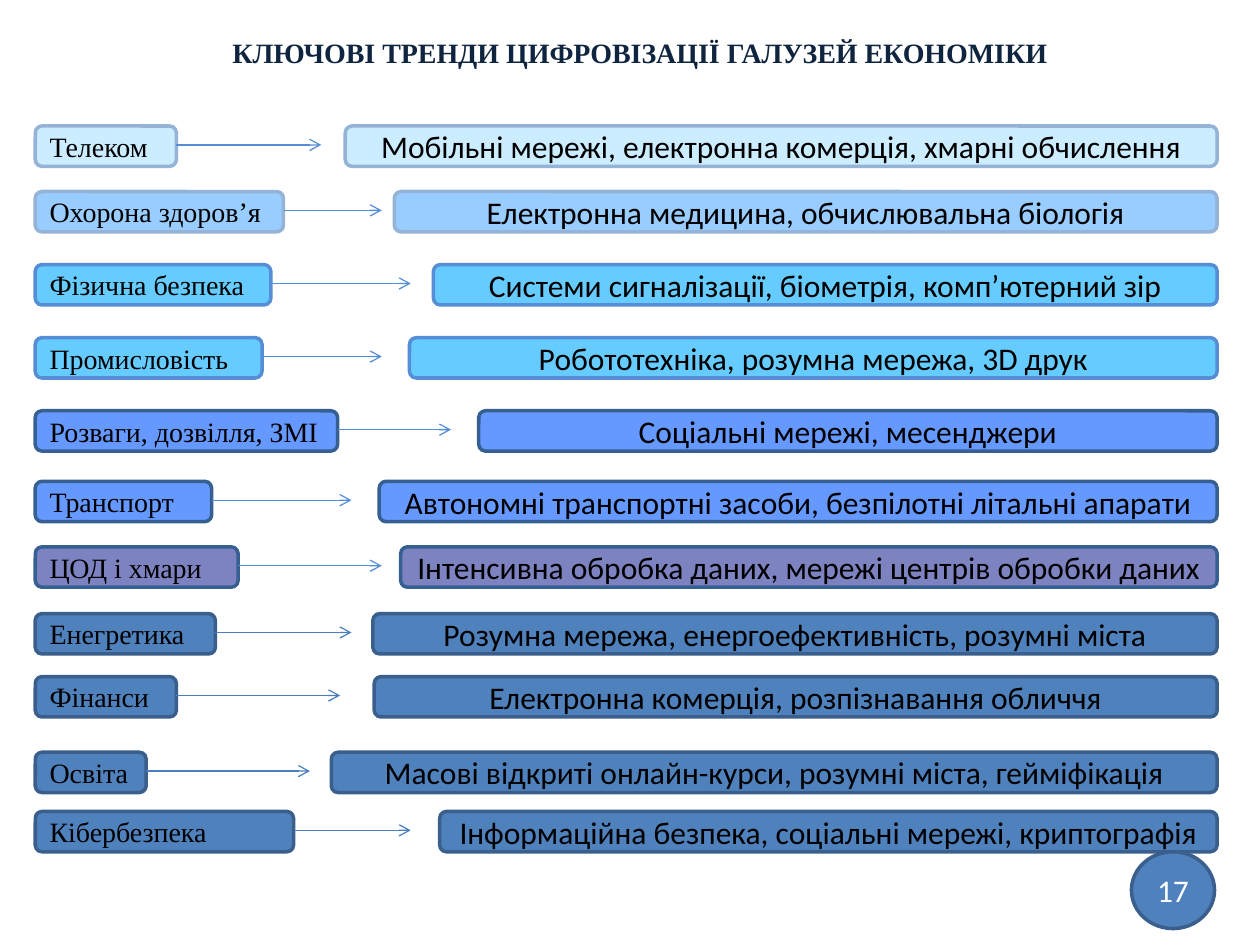
"""Build a slide that links economic sectors to their digitalisation trends."""
import pptx
import pptx.util
import pptx.dml.color
import pptx.enum.shapes
import pptx.enum.text
import pptx.oxml

prs = pptx.Presentation()
prs.slide_width, prs.slide_height = pptx.util.Inches(10), pptx.util.Inches(7.5)
unit = prs.slide_width // 1000
shapes = pptx.enum.shapes.MSO_SHAPE
align = pptx.enum.text.PP_ALIGN
LEFT, RIGHT, BOX_H, ARROW_DROP = 28, 966, 32, 15


def rgb(value):
    return pptx.dml.color.RGBColor.from_string(value)


def put(sp, box, text, al, color, fmt, fill=None, line=None):
    for name, value in zip(("left", "top", "width", "height"), box):
        setattr(sp, name, value * unit)
    if fill:
        sp.shadow.inherit = False
        sp.fill.solid()
        sp.fill.fore_color.rgb = rgb(fill)
        sp.line.color.rgb = rgb(line)
        sp.line.width = pptx.util.Pt(2)
    tf = sp.text_frame
    tf.word_wrap = True
    tf.vertical_anchor = pptx.enum.text.MSO_ANCHOR.MIDDLE
    p = tf.paragraphs[0]
    p.alignment = al
    r = p.add_run()
    r.text = text
    r.font.color.rgb = rgb(color)
    for name, value in fmt.items():
        setattr(r.font, name, value)


label_fmt = {"name": "Times New Roman", "size": pptx.util.Pt(16)}
trend_fmt = {"name": "Calibri", "size": pptx.util.Pt(18)}
title_fmt = {**label_fmt, "bold": True}

pale = ("CCECFF", "95B3D7", "558ED5")
light = ("99CCFF", "95B3D7", "558ED5")
sky = ("66CCFF", "558ED5", "558ED5")
blue = ("6699FF", "376092", "558ED5")
violet = ("7D83C1", "376092", "558ED5")
steel = ("4F81BD", "3A5F8C", "4B7EBC")

rows = [
    (100, 112, 255, 274, pale, "Телеком", "Мобільні мережі, електронна комерція, хмарні обчислення"),
    (152, 197, 303, 313, light, "Охорона здоров’я", "Електронна медицина, обчислювальна біологія"),
    (210, 187, 326, 344, sky, "Фізична безпека", "Системи сигналізації, біометрія, комп’ютерний зір"),
    (268, 180, 303, 325, sky, "Промисловість", "Робототехніка, розумна мережа, 3D друк"),
    (326, 240, 358, 380, blue, "Розваги, дозвілля, ЗМІ", "Соціальні мережі, месенджери"),
    (382, 140, 279, 301, blue, "Транспорт", "Автономні транспортні засоби, безпілотні літальні апарати"),
    (434, 161, 303, 318, violet, "ЦОД і хмари", "Інтенсивна обробка даних, мережі центрів обробки даних"),
    (487, 143, 279, 296, steel, "Енегретика", "Розумна мережа, енергоефективність, розумні міста"),
    (537, 112, 270, 297, steel, "Фінанси", "Електронна комерція, розпізнавання обличчя"),
    (597, 88, 246, 263, steel, "Освіта", "Масові відкриті онлайн-курси, розумні міста, гейміфікація"),
    (644, 205, 326, 349, steel, "Кібербезпека", "Інформаційна безпека, соціальні мережі, криптографія"),
]

s = prs.slides.add_slide(prs.slide_layouts[5])
put(s.shapes.title, (35, 23, 946, 37), "КЛЮЧОВІ ТРЕНДИ ЦИФРОВІЗАЦІЇ ГАЛУЗЕЙ ЕКОНОМІКИ",
    align.CENTER, "0F243E", title_fmt)

for top, width, tip, trend_left, (fill, line, arrow), label, trend in rows:
    for left, w, text, al, fmt in (
        (LEFT, width, label, align.LEFT, label_fmt),
        (trend_left, RIGHT - trend_left, trend, align.CENTER, trend_fmt),
    ):
        sp = s.shapes.add_shape(shapes.ROUNDED_RECTANGLE, 0, 0, unit, unit)
        put(sp, (left, top, w, BOX_H), text, al, "000000", fmt, fill, line)
    y = (top + ARROW_DROP) * unit
    cn = s.shapes.add_connector(pptx.enum.shapes.MSO_CONNECTOR.STRAIGHT,
                                (LEFT + width) * unit, y, tip * unit, y)
    cn.line.color.rgb = rgb(arrow)
    cn.line.width = pptx.util.Pt(0.75)
    tail = pptx.oxml.parse_xml(
        '<a:tailEnd xmlns:a="http://schemas.openxmlformats.org/drawingml/2006/main" type="arrow"/>')
    cn.line._get_or_add_ln().append(tail)
    cn._element.spPr.append(pptx.oxml.parse_xml(
        '<a:effectLst xmlns:a="http://schemas.openxmlformats.org/drawingml/2006/main"/>'))

sp = s.shapes.add_shape(shapes.OVAL, 0, 0, unit, unit)
put(sp, (898, 676, 66, 61), "17", align.CENTER, "FFFFFF", trend_fmt, *steel[:2])

prs.save("out.pptx")
